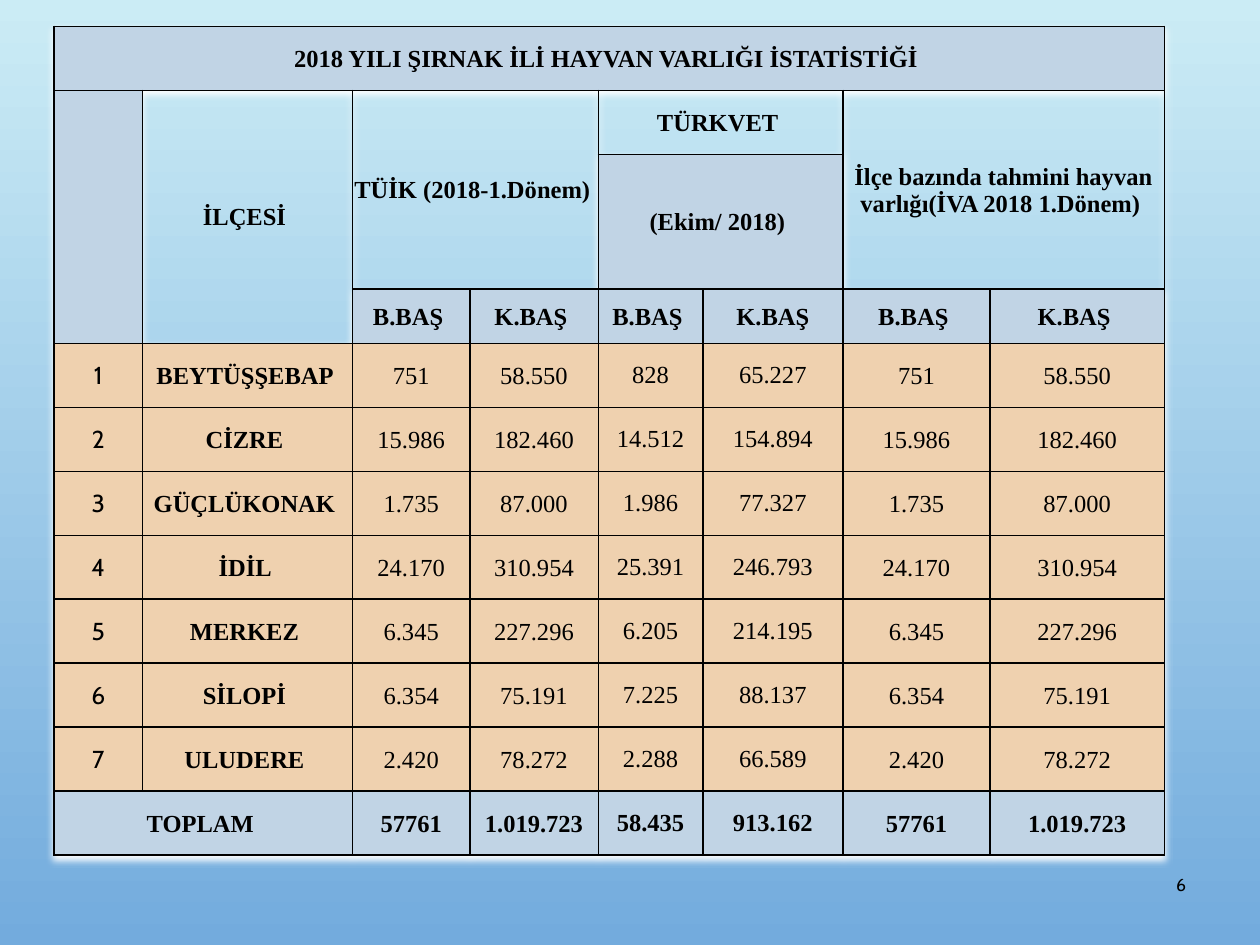
from dataclasses import dataclass

from lxml.etree import SubElement
from pptx import Presentation
from pptx.dml.color import RGBColor
from pptx.enum.text import MSO_ANCHOR, PP_ALIGN
from pptx.oxml.ns import qn
from pptx.util import Cm, Pt


@dataclass(frozen=True)
class Theme:
    """Colours, fonts and type sizes of the deck."""

    sky_top: str = "CBECF5"
    sky_bottom: str = "73ABDD"
    header: str = "C1D4E5"
    body: str = "EFD1AF"
    ink: str = "000000"
    glow: str = "FFFFFF"
    serif: str = "Times New Roman"
    sans: str = "Cabin"
    table_size: int = 14
    number_size: int = 10
    border: float = 1


TITLE = "2018 YILI ŞIRNAK İLİ HAYVAN VARLIĞI İSTATİSTİĞİ "
COLUMN_WIDTHS = [1.78, 4.24, 2.36, 2.59, 2.11, 2.82, 2.97, 3.51]
ROW_HEIGHTS = [1.29, 1.29, 2.72, 1.09] + [1.29] * 8
TURKVET_COLUMNS = (4, 5)
FIRST_DISTRICT_ROW = 4
TOTAL_ROW = 11

HEADINGS = {
    (0, 0): TITLE,
    (1, 1): "İLÇESİ ",
    (1, 2): "TÜİK (2018-1.Dönem) ",
    (1, 4): "TÜRKVET ",
    (1, 6): "İlçe bazında tahmini hayvan varlığı(İVA 2018 1.Dönem) ",
    (2, 4): "(Ekim/ 2018) ",
}
SUBHEADINGS = ["B.BAŞ ", "K.BAŞ ", "B.BAŞ ", "K.BAŞ", "B.BAŞ ", "K.BAŞ "]
SPANS = {
    (0, 0): (1, 8),
    (1, 0): (3, 1),
    (1, 1): (3, 1),
    (1, 2): (2, 2),
    (1, 4): (1, 2),
    (1, 6): (2, 2),
    (2, 4): (1, 2),
    (TOTAL_ROW, 0): (1, 2),
}
CLEAR_CELLS = {(1, 1), (1, 2), (1, 4), (1, 6)}
DISTRICTS = [
    ("BEYTÜŞŞEBAP ", ["751", "58.550"], ["828", "65.227"]),
    ("CİZRE ", ["15.986", "182.460"], ["14.512", "154.894"]),
    ("GÜÇLÜKONAK ", ["1.735", "87.000"], ["1.986", "77.327"]),
    ("İDİL ", ["24.170", "310.954"], ["25.391", "246.793"]),
    ("MERKEZ ", ["6.345", "227.296"], ["6.205", "214.195"]),
    ("SİLOPİ ", ["6.354", "75.191"], ["7.225", "88.137"]),
    ("ULUDERE ", ["2.420", "78.272"], ["2.288", "66.589"]),
]
TOTALS = (["57761", "1.019.723"], ["58.435", "913.162"])


def write_text(frame, text, *, font, size, color, bold=False, align=PP_ALIGN.CENTER):
    """Write one formatted paragraph into a text frame."""
    para = frame.paragraphs[0]
    para.alignment = align
    span = para.add_run()
    span.text = text
    span.font.name = font
    span.font.size = Pt(size)
    span.font.bold = bold
    span.font.color.rgb = RGBColor.from_string(color)


def table_rows():
    """Return the text of every table row, column by column."""
    rows = [[HEADINGS.get((row, column), "") for column in range(8)] for row in range(3)]
    rows.append(["", "", *SUBHEADINGS])
    for number, (name, survey, turkvet) in enumerate(DISTRICTS, 1):
        rows.append([str(number), name, *survey, *turkvet, *survey])
    survey, turkvet = TOTALS
    rows.append(["TOPLAM ", "", *survey, *turkvet, *survey])
    return rows


class SlideBuilder:
    """Holds the theme and the current slide."""

    def __init__(self, slide, theme):
        """Keep the slide and its theme."""
        self.slide = slide
        self.theme = theme

    def background(self):
        """Fill the slide with a gradient from top to bottom."""
        fill = self.slide.background.fill
        fill.gradient()
        fill.gradient_angle = 270
        colors = (self.theme.sky_top, self.theme.sky_bottom)
        for stop, color, position in zip(fill.gradient_stops, colors, (0, 1)):
            stop.color.rgb = RGBColor.from_string(color)
            stop.position = position

    def table(self, rows, left, top):
        """Add the merged and bordered statistics table."""
        frame = self.slide.shapes.add_table(
            len(rows), len(COLUMN_WIDTHS), Cm(left), Cm(top),
            Cm(sum(COLUMN_WIDTHS)), Cm(sum(ROW_HEIGHTS)),
        )
        table = frame.table
        table.first_row = table.horz_banding = False
        self.table_glow(table)
        for column, width in zip(table.columns, COLUMN_WIDTHS):
            column.width = Cm(width)
        for row, height in zip(table.rows, ROW_HEIGHTS):
            row.height = Cm(height)
        for (row, column), (height, width) in SPANS.items():
            last = table.cell(row + height - 1, column + width - 1)
            table.cell(row, column).merge(last)
        for row, texts in enumerate(rows):
            for column, text in enumerate(texts):
                self.cell(table.cell(row, column), row, column, text)

    def table_glow(self, table):
        """Give the table a soft white shadow."""
        properties = table._tbl.tblPr
        effects = properties.makeelement(qn("a:effectLst"), {})
        properties.insert(0, effects)
        shadow = SubElement(
            effects, qn("a:outerShdw"), blurRad=str(Pt(4)), dist=str(Pt(2)),
            dir="5400000", rotWithShape="0",
        )
        SubElement(shadow, qn("a:srgbClr"), val=self.theme.glow)

    def cell(self, cell, row, column, text):
        """Format one cell according to its place in the table."""
        theme = self.theme
        in_body = FIRST_DISTRICT_ROW <= row < TOTAL_ROW
        is_turkvet = row >= FIRST_DISTRICT_ROW and column in TURKVET_COLUMNS
        self.cell_borders(cell)
        if (row, column) in CLEAR_CELLS:
            cell.fill.background()
        else:
            cell.fill.solid()
            color = theme.body if in_body else theme.header
            cell.fill.fore_color.rgb = RGBColor.from_string(color)
        cell.vertical_anchor = MSO_ANCHOR.MIDDLE
        cell.margin_left = cell.margin_right = Cm(0.18 if is_turkvet else 0.03)
        cell.margin_top = Cm(0 if is_turkvet else 0.03)
        cell.margin_bottom = Cm(0)
        if text:
            write_text(
                cell.text_frame, text, size=theme.table_size, color=theme.ink,
                font=theme.sans if in_body and column == 0 else theme.serif,
                bold=not in_body or column == 1,
            )

    def cell_borders(self, cell):
        """Draw a thin line on all four sides of a cell."""
        properties = cell._tc.get_or_add_tcPr()
        for side in ("lnL", "lnR", "lnT", "lnB"):
            line = SubElement(properties, qn(f"a:{side}"), w=str(Pt(self.theme.border)))
            fill = SubElement(line, qn("a:solidFill"))
            SubElement(fill, qn("a:srgbClr"), val=self.theme.ink)

    def page_number(self, text, left, top, width, height):
        """Add the page number, aligned right."""
        box = self.slide.shapes.add_textbox(Cm(left), Cm(top), Cm(width), Cm(height))
        frame = box.text_frame
        frame.word_wrap = True
        frame.vertical_anchor = MSO_ANCHOR.MIDDLE
        write_text(
            frame, text, font=self.theme.sans, size=self.theme.number_size,
            color=self.theme.ink, align=PP_ALIGN.RIGHT,
        )


def main():
    """Build the deck and save it."""
    deck = Presentation()
    deck.slide_width, deck.slide_height = Cm(25.4), Cm(19.05)
    page = SlideBuilder(deck.slides.add_slide(deck.slide_layouts[6]), Theme())
    page.background()
    page.table(table_rows(), left=1.09, top=0.53)
    page.page_number("6", left=22.56, top=17.12, width=1.6, height=1.42)
    deck.save("out.pptx")


if __name__ == "__main__":
    main()
